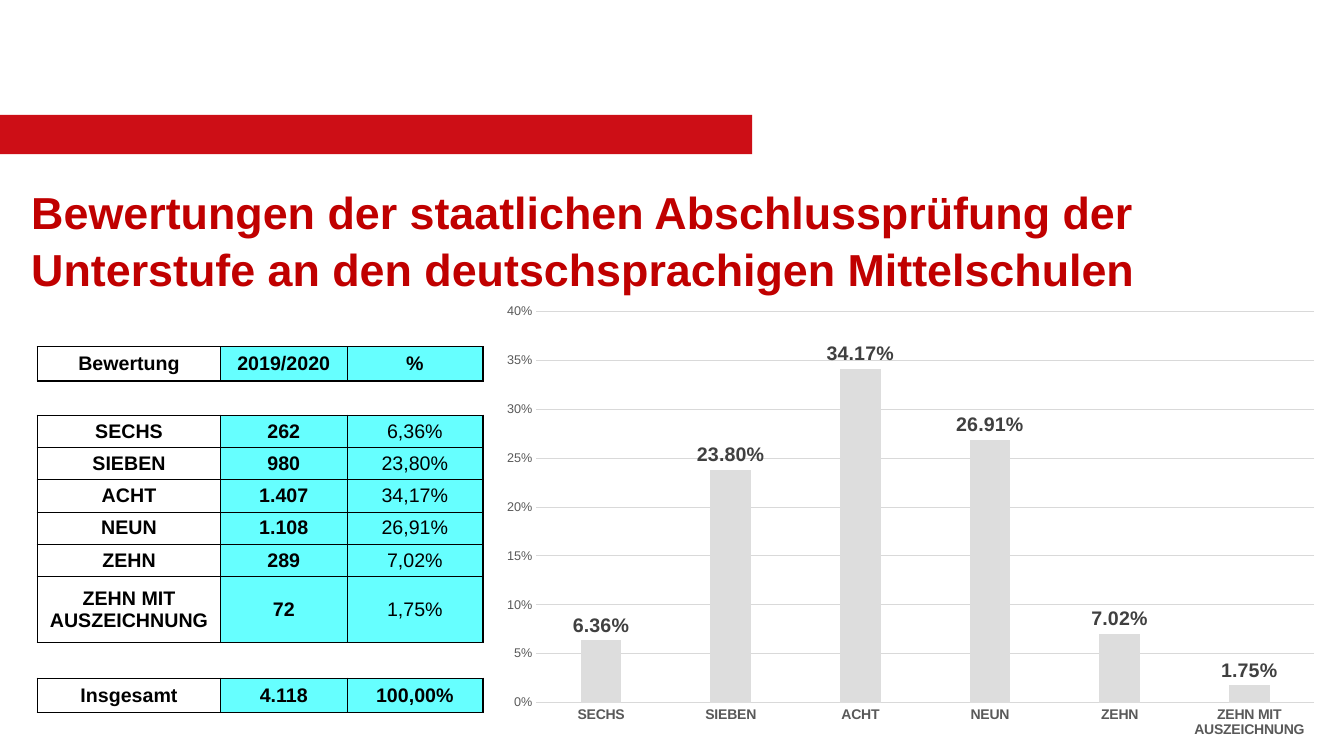
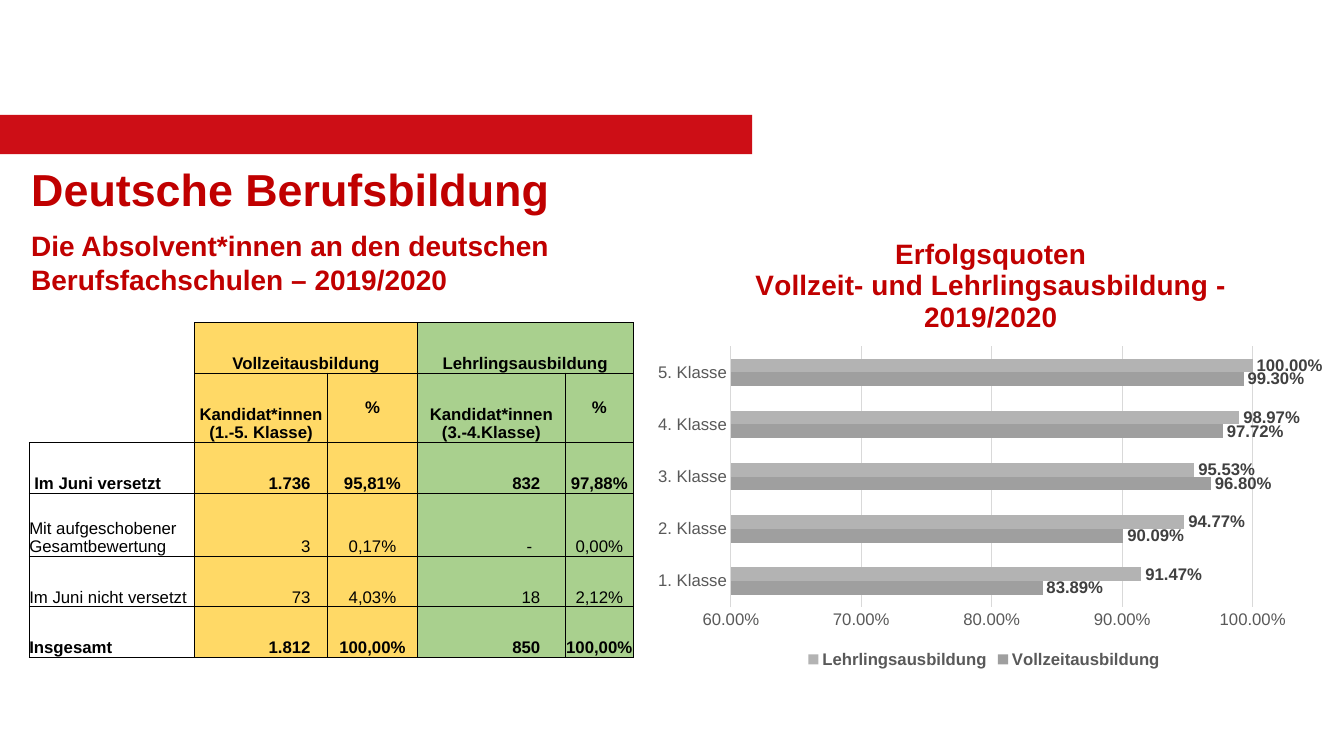
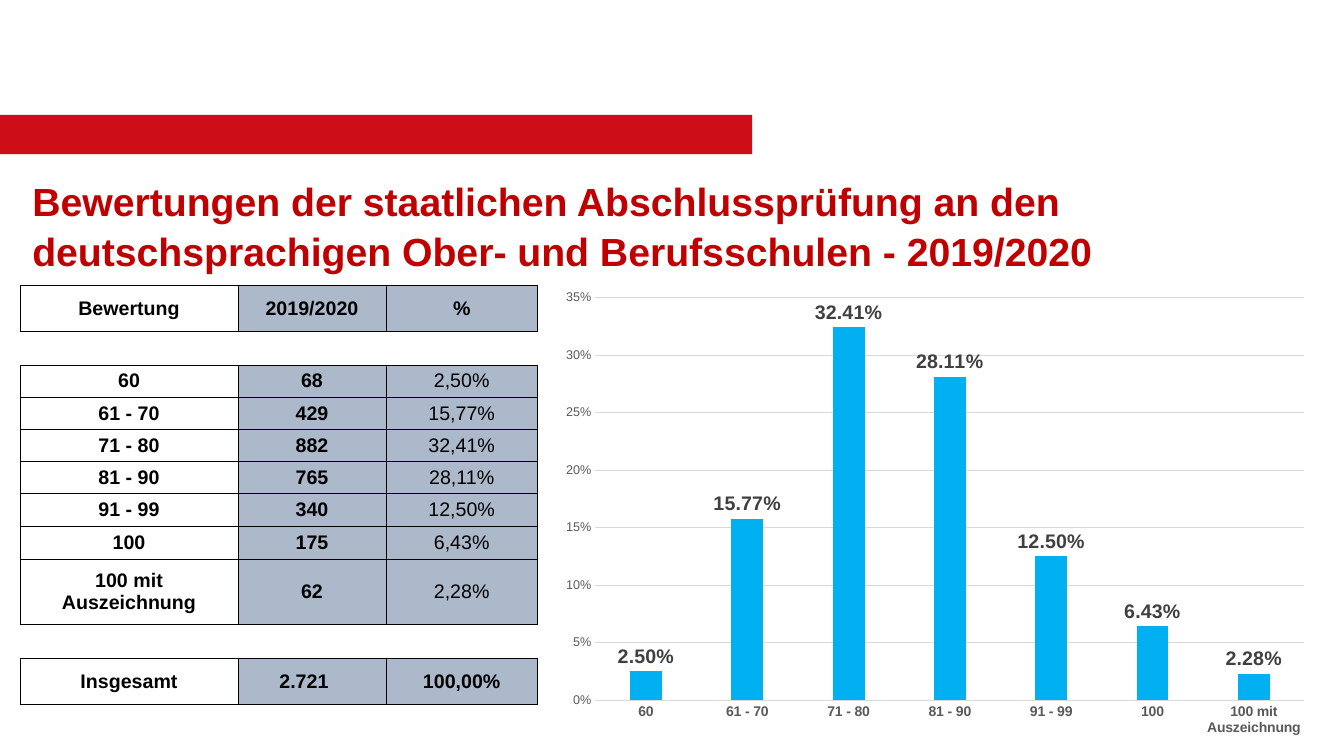
from dataclasses import dataclass

from lxml import etree
from pptx import Presentation
from pptx import util as u
from pptx.chart.data import CategoryChartData
from pptx.dml.color import RGBColor
from pptx.enum import chart as ch, shapes, text
from pptx.oxml.ns import qn


@dataclass(frozen=True)
class Theme:
    font: str = "Arial"
    band: str = "CD0E16"
    title: str = "C00000"
    ink: str = "000000"
    axis: str = "595959"
    label: str = "404040"
    grid: str = "D9D9D9"
    cyan: str = "66FFFF"
    slate: str = "ACB9CA"
    yellow: str = "FFD966"
    green: str = "A9D08E"
    big: int = 32
    medium: int = 28
    sub: int = 20
    grade: int = 14
    small: int = 12
    tick: int = 10
    scale: int = 9
    thick: float = 1
    thin: float = 0.5


T = Theme()
rgb = RGBColor.from_string
AL, MSO = text.PP_ALIGN, text.MSO_ANCHOR
NO_STYLE = "{2D5ABB26-0587-4C30-8999-92F81FD0307C}"


def write(tf, content, size, color=T.ink, bold=True, align=AL.LEFT, spacing=None):
    """Fill a text frame, one paragraph per line, in one format."""
    for i, line in enumerate(content.split("\n")):
        p = tf.add_paragraph() if i else tf.paragraphs[0]
        p.alignment, p.line_spacing = align, spacing
        r = p.add_run()
        r.text = line
        f = r.font
        f.name, f.size, f.bold = T.font, u.Pt(size), bold
        f.color.rgb = rgb(color)


def set_cell(cell, content="", fill=None, edges=None, anchor=MSO.MIDDLE,
             left=0, right=0, **fmt):
    """Format a table cell; edges maps L, R, T, B to line widths."""
    cell.margin_top = cell.margin_bottom = 0
    cell.margin_left, cell.margin_right = u.Inches(left), u.Inches(right)
    cell.vertical_anchor = anchor
    tcPr = cell._tc.get_or_add_tcPr()
    for side, width in (edges or {}).items():
        ln = etree.SubElement(tcPr, qn(f"a:ln{side}"), w=str(u.Pt(width)))
        solid = etree.SubElement(ln, qn("a:solidFill"))
        etree.SubElement(solid, qn("a:srgbClr"), val=T.ink)
    if fill:
        cell.fill.solid()
        cell.fill.fore_color.rgb = rgb(fill)
    else:
        cell.fill.background()
    if content:
        write(cell.text_frame, content, **fmt)


# Slides and titles
prs = Presentation()
prs.slide_width, prs.slide_height = u.Inches(13.33), u.Inches(7.5)
layout = prs.slide_layouts[5]
titles = [
    ("Bewertungen der staatlichen Abschlussprüfung der Unterstufe "
     "an den deutschsprachigen Mittelschulen", (0.21, 1.66, 12.91, 1.42), T.big),
    ("Deutsche Berufsbildung", (0.21, 1.62, 5.75, 0.47), T.big),
    ("Bewertungen der staatlichen Abschlussprüfung an den deutschsprachigen "
     "Ober- und Berufsschulen - 2019/2020", (0.22, 1.62, 12, 1.22), T.medium),
]
slides = []
for title, box, size in titles:
    s = prs.slides.add_slide(layout)
    sp = s.shapes.title
    sp.left, sp.top, sp.width, sp.height = map(u.Inches, box)
    tf = sp.text_frame
    tf.auto_size, tf.vertical_anchor = text.MSO_AUTO_SIZE.NONE, MSO.MIDDLE
    write(tf, title, size, T.title, spacing=1.05)
    slides.append(s)
middle_school, vocational, high_school = slides

# Red band, moved to the shared layout
band = middle_school.shapes.add_shape(
    shapes.MSO_SHAPE.RECTANGLE, 0, u.Inches(1.14), u.Inches(7.46), u.Inches(0.39))
band.shadow.inherit = False
band.fill.solid()
band.fill.fore_color.rgb = rgb(T.band)
band.line.fill.background()
band._element.nvSpPr.cNvPr.set("id", "99")
layout.shapes._spTree.insert(2, band._element)

# Subtitle of the vocational slide
sp = vocational.shapes.add_textbox(*map(u.Inches, (0.21, 2.2, 5.75, 0.8)))
tf = sp.text_frame
tf.word_wrap, tf.vertical_anchor = True, MSO.MIDDLE
write(tf, "Die Absolvent*innen an den deutschen Berufsfachschulen – 2019/2020",
      T.sub, T.title)

# Grade tables: header, gap, one row per grade, gap, total
middle_grades = {"SECHS": 262, "SIEBEN": 980, "ACHT": 1407, "NEUN": 1108,
                 "ZEHN": 289, "ZEHN MIT AUSZEICHNUNG": 72}
high_grades = {"60": 68, "61 - 70": 429, "71 - 80": 882, "81 - 90": 765,
               "91 - 99": 340, "100": 175, "100 mit\nAuszeichnung": 62}
grade_tables = [
    (middle_school, middle_grades, (0.37, 3.44), (1.82, 1.25, 1.35),
     (0.34, 0.34, *[0.32] * 5, 0.66, 0.35, 0.34), T.cyan, T.thick, 0),
    (high_school, high_grades, (0.2, 2.83), (2.16, 1.47, 1.5),
     (0.46, 0.33, *[0.32] * 5, 0.33, 0.65, 0.33, 0.46), T.slate, T.thin, 0.16),
]
for s, grades, at, widths, heights, fill, outer, total_pad in grade_tables:
    total = sum(grades.values())
    rows = [("Bewertung", "2019/2020", "%"), None]
    for name, n in [*grades.items(), ("Insgesamt", total)]:
        rows.append((name, f"{n:,}".replace(",", "."),
                     f"{n / total:.2%}".replace(".", ",")))
    rows.insert(-1, None)
    size = map(u.Inches, (*at, sum(widths), sum(heights)))
    table = s.shapes.add_table(len(rows), 3, *size).table
    table._tbl.tblPr[0].text = NO_STYLE
    table.first_row = table.horz_banding = False
    for col, width in zip(table.columns, widths):
        col.width = u.Inches(width)
    last = len(rows) - 1
    for i, (row, height) in enumerate(zip(rows, heights)):
        table.rows[i].height = u.Inches(height)
        for j in range(3):
            if row is None:
                set_cell(table.cell(i, j))
                continue
            is_grade = 0 < i < last
            edges = {
                "L": T.thin if j == 2 else outer,
                "R": T.thin if j == 1 else outer,
                "T": T.thin if is_grade and rows[i - 1] else outer,
                "B": T.thin if is_grade and rows[i + 1] else outer,
            }
            set_cell(table.cell(i, j), row[j], fill if j else None, edges,
                     right=total_pad if (i, j) == (last, 1) else 0,
                     size=T.grade, bold=not (is_grade and j == 2), align=AL.CENTER)

# Vocational table
widths = (1.64, 1.32, 0.89, 1.47, 0.67)
heights = (0.5, 0.69, 0.5, 0.63, 0.5, 0.5)
rows = [
    ("", "Vollzeitausbildung", "", "Lehrlingsausbildung", ""),
    ("", "Kandidat*innen\n(1.-5. Klasse)", "%", "Kandidat*innen\n(3.-4.Klasse)", "%"),
    ("Im Juni versetzt", "1.736", "95,81%", "832", "97,88%"),
    ("Mit aufgeschobener Gesamtbewertung", "3", "0,17%", "-", "0,00%"),
    ("Im Juni nicht versetzt", "73", "4,03%", "18", "2,12%"),
    ("Insgesamt", "1.812", "100,00%", "850", "100,00%"),
]
fills = (None, T.yellow, T.yellow, T.green, T.green)
count_pads = {1: 0.17, 3: 0.25}
size = map(u.Inches, (0.29, 3.2, sum(widths), sum(heights)))
table = vocational.shapes.add_table(len(rows), len(widths), *size).table
table._tbl.tblPr[0].text = NO_STYLE
table.first_row = table.horz_banding = False
for col, width in zip(table.columns, widths):
    col.width = u.Inches(width)
for i, (row, height) in enumerate(zip(rows, heights)):
    table.rows[i].height = u.Inches(height)
    for j, content in enumerate(row):
        is_count = i > 1 and j in count_pads
        pad = count_pads[j] if is_count else 0
        corner = i < 2 and j == 0
        set_cell(table.cell(i, j), content, fills[j],
                 None if corner else dict.fromkeys("LRTB", T.thin),
                 anchor=MSO.MIDDLE if content == "%" else MSO.BOTTOM,
                 left=0.05 if (i, j) == (2, 0) else 0,
                 right=0.33 if content == "-" else pad,
                 size=T.small, bold=i not in (3, 4),
                 align=AL.RIGHT if is_count else AL.CENTER if j else AL.LEFT)
for j in (1, 3):
    table.cell(0, j).merge(table.cell(0, j + 1))

# Charts
column, bar = ch.XL_CHART_TYPE.COLUMN_CLUSTERED, ch.XL_CHART_TYPE.BAR_CLUSTERED
middle_shares, high_shares = (
    [round(n / sum(g.values()), 4) for n in g.values()]
    for g in (middle_grades, high_grades))
grade_style = dict(kind=column, gap=219, overlap=-27, fmt="0%", low=0, step=0.05,
                   cat_size=T.tick, val_size=T.scale, label_size=T.grade, title=None)
charts = [
    dict(grade_style, slide=middle_school, box=(4.86, 2.73, 8.35, 4.76), high=0.4,
         plot=(0.055, 0.076, 0.924, 0.815), cats=list(middle_grades),
         series=[("Series 1", middle_shares, "DDDDDD")]),
    dict(slide=vocational, box=(6.43, 2.1, 6.69, 4.57), kind=bar, gap=182, overlap=0,
         fmt="0.00%", low=0.6, high=1, step=0.1, plot=(0.123, 0.292, 0.777, 0.567),
         cat_size=T.small, val_size=T.small, label_size=T.small,
         title="Erfolgsquoten\nVollzeit- und Lehrlingsausbildung -\n2019/2020",
         cats=[f"{n}. Klasse" for n in range(1, 6)],
         series=[("Vollzeitausbildung",
                  (0.8389, 0.9009, 0.968, 0.9772, 0.993), "9F9F9F"),
                 ("Lehrlingsausbildung",
                  (0.9147, 0.9477, 0.9553, 0.9897, 1), "B3B3B3")]),
    dict(grade_style, slide=high_school, box=(5.33, 2.88, 7.67, 4.57), high=0.35,
         plot=(0.075, 0.015, 0.917, 0.875), cats=list(high_grades),
         series=[("Series 1", high_shares, "00B0F0")]),
]
for c in charts:
    data = CategoryChartData(number_format="0.00%")
    data.categories = c["cats"]
    for name, values, _ in c["series"]:
        data.add_series(name, values)
    chart = c["slide"].shapes.add_chart(
        c["kind"], *map(u.Inches, c["box"]), data).chart
    plot, cat, val = chart.plots[0], chart.category_axis, chart.value_axis
    plot.gap_width, plot.overlap, plot.vary_by_categories = c["gap"], c["overlap"], False

    # Axes
    val.minimum_scale, val.maximum_scale, val.major_unit = c["low"], c["high"], c["step"]
    val.tick_labels.number_format = c["fmt"]
    val.tick_labels.number_format_is_linked = False
    val.has_major_gridlines = True
    for axis in (cat, val):
        axis.major_tick_mark = axis.minor_tick_mark = ch.XL_TICK_MARK.NONE
    for line in (cat.format.line, val.major_gridlines.format.line):
        line.color.rgb, line.width = rgb(T.grid), u.Pt(0.75)
    val.format.line.fill.background()

    # Fonts, legend and series
    is_grades = c["kind"] == column
    fonts = [(chart.font, T.tick, T.ink, False),
             (cat.tick_labels.font, c["cat_size"], T.axis, is_grades),
             (val.tick_labels.font, c["val_size"], T.axis, False)]
    chart.has_legend = not is_grades
    if chart.has_legend:
        chart.legend.position = ch.XL_LEGEND_POSITION.BOTTOM
        chart.legend.include_in_layout = False
        fonts.append((chart.legend.font, T.small, T.axis, True))
    for series, (_, _, color) in zip(plot.series, c["series"]):
        series.format.fill.solid()
        series.format.fill.fore_color.rgb = rgb(color)
        labels = series.data_labels
        labels.show_value = True
        labels.number_format, labels.number_format_is_linked = "0.00%", False
        labels.position = ch.XL_LABEL_POSITION.OUTSIDE_END
        fonts.append((labels.font, c["label_size"], T.label, True))
    for f, size, color, bold in fonts:
        f.name, f.size, f.bold = T.font, u.Pt(size), bold
        f.color.rgb = rgb(color)

    # Title, and fixed places for the plot and the title
    places = [(chart._chartSpace.chart.plotArea, 0, c["plot"])]
    chart.has_title = bool(c["title"])
    if c["title"]:
        write(chart.chart_title.text_frame, c["title"], T.sub, T.title, align=AL.CENTER)
        places.append((chart.chart_title._element, 1, (0.155, 0.048)))
    for parent, index, box in places:
        for old in parent.findall(qn("c:layout")):
            parent.remove(old)
        place = etree.Element(qn("c:layout"))
        manual = etree.SubElement(place, qn("c:manualLayout"))
        if len(box) == 4:
            etree.SubElement(manual, qn("c:layoutTarget"), val="inner")
        for key, _ in zip("xywh", box):
            etree.SubElement(manual, qn(f"c:{key}Mode"), val="edge" if key in "xy" else "factor")
        for key, value in zip("xywh", box):
            etree.SubElement(manual, qn(f"c:{key}"), val=str(value))
        parent.insert(index, place)

prs.save("out.pptx")
